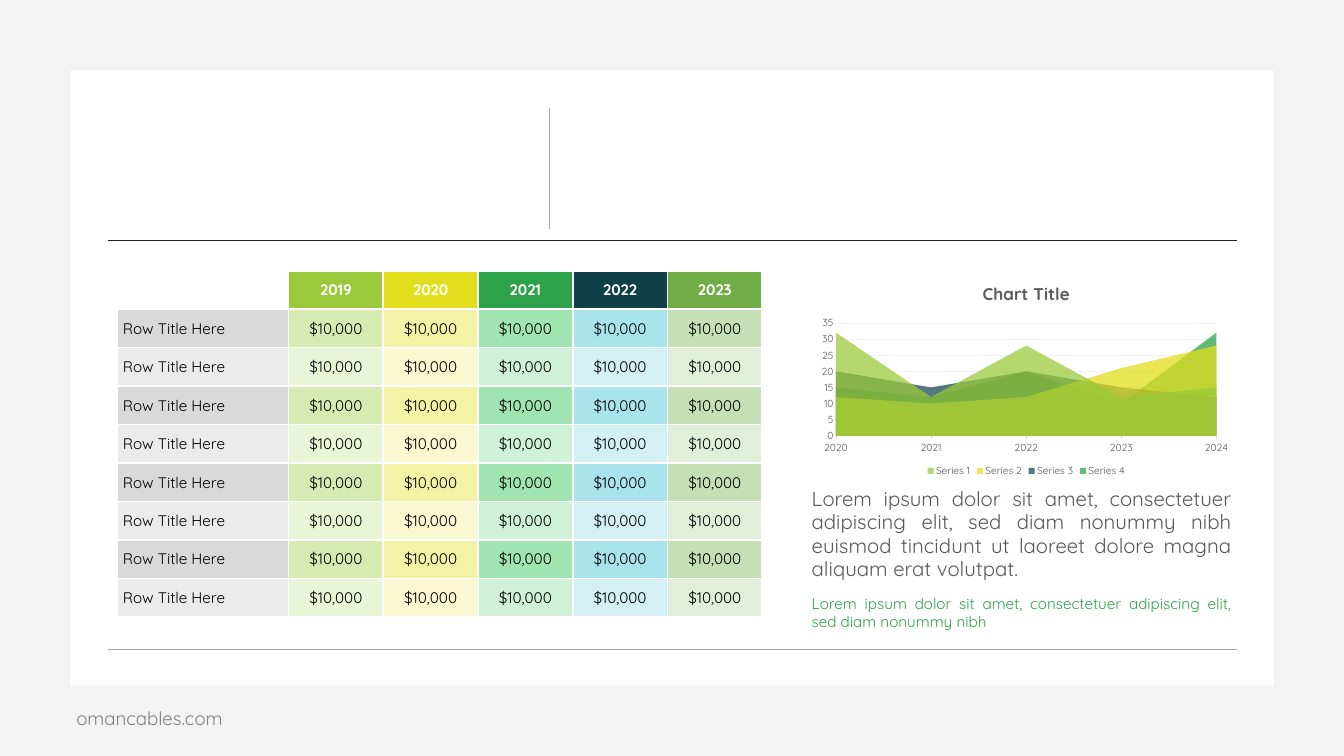
from dataclasses import dataclass

from lxml import etree
from pptx import Presentation
from pptx.chart.data import CategoryChartData
from pptx.dml.color import RGBColor
from pptx.enum.chart import XL_CHART_TYPE, XL_LEGEND_POSITION, XL_TICK_MARK
from pptx.enum.shapes import MSO_CONNECTOR, MSO_SHAPE
from pptx.enum.text import MSO_ANCHOR, PP_ALIGN
from pptx.oxml.ns import qn
from pptx.util import Inches, Pt

AREA = XL_CHART_TYPE.AREA
BOTTOM = XL_LEGEND_POSITION.BOTTOM
TICK_NONE, TICK_OUT = XL_TICK_MARK.NONE, XL_TICK_MARK.OUTSIDE
STRAIGHT, FRAME = MSO_CONNECTOR.STRAIGHT, MSO_SHAPE.FRAME
MIDDLE = MSO_ANCHOR.MIDDLE
LEFT, CENTER, JUSTIFY = PP_ALIGN.LEFT, PP_ALIGN.CENTER, PP_ALIGN.JUSTIFY


@dataclass(frozen=True)
class Theme:
    font: str = "Quicksand"
    white: str = "FFFFFF"
    black: str = "000000"
    frame: str = "EFEFEF"
    rule: str = "231F20"
    hairline: str = "A4A7AA"
    body: str = "57585B"
    footer: str = "808080"
    chart_text: str = "595959"
    axis: str = "D9D9D9"
    grid: str = "F2F2F2"
    row_title: str = "D9D9D9"
    lime: str = "9ACA3C"
    yellow: str = "E2DE1C"
    green: str = "2CA349"
    navy: str = "104047"
    leaf: str = "70AD47"
    tints: tuple = ("D7EAB1", "F4F2A4", "A0E5B1", "A9E3EC", "C5E0B4")
    body_size: int = 24
    footer_size: int = 22
    chart_title_size: int = 20
    table_size: int = 18
    note_size: int = 18
    chart_size: int = 12


class Deck:
    def __init__(self, prs, theme):
        self.prs, self.theme = prs, theme
        self.s = prs.slides.add_slide(prs.slide_layouts[6])

    def x(self, share):
        return round(self.prs.slide_width * share / 100)

    def y(self, share):
        return round(self.prs.slide_height * share / 100)

    def box(self, x, y, w, h):
        return self.x(x), self.y(y), self.x(w), self.y(h)

    def fill(self, fill, color, alpha=100):
        fill.solid()
        fill.fore_color.rgb = RGBColor.from_string(color)
        if alpha < 100:
            clr = fill._xPr.find(qn("a:solidFill"))[0]
            etree.SubElement(clr, qn("a:alpha"), val=str(alpha * 1000))

    def font(self, font, size, color, bold=False):
        font.name, font.size, font.bold = self.theme.font, Pt(size), bold
        font.color.rgb = RGBColor.from_string(color)

    def stroke(self, line, color, width):
        line.width = Pt(width)
        line.color.rgb = RGBColor.from_string(color)

    def frame(self, thickness):
        sp = self.s.shapes.add_shape(FRAME, *self.box(0, 0, 100, 100))
        sp.adjustments[0] = thickness
        sp.shadow.inherit = False
        self.fill(sp.fill, self.theme.frame, 75)
        sp.line.fill.background()

    def line(self, x1, y1, x2, y2, color, width):
        ln = self.s.shapes.add_connector(
            STRAIGHT, self.x(x1), self.y(y1), self.x(x2), self.y(y2))
        self.stroke(ln.line, color, width)
        etree.SubElement(ln._element.spPr, qn("a:effectLst"))

    def text(self, x, y, w, h, paragraphs, align=LEFT, left=0.1, spacing=1, gap=0):
        tf = self.s.shapes.add_textbox(*self.box(x, y, w, h)).text_frame
        tf.word_wrap = True
        tf.margin_left = Inches(left)
        for i, (text, size, color) in enumerate(paragraphs):
            p = tf.add_paragraph() if i else tf.paragraphs[0]
            p.text = text
            p.alignment, p.line_spacing = align, spacing
            p.space_before = Pt(gap if i else 0)
            self.font(p.runs[0].font, size, color)

    def cell(self, cell, text, fill, alpha=100, color=None, bold=False, align=CENTER):
        t = self.theme
        tcPr = cell._tc.get_or_add_tcPr()
        for side in ("lnL", "lnR", "lnT", "lnB"):
            ln = etree.SubElement(tcPr, qn(f"a:{side}"), w=str(Pt(2.25)))
            solid = etree.SubElement(ln, qn("a:solidFill"))
            etree.SubElement(solid, qn("a:srgbClr"), val=t.white)
        self.fill(cell.fill, fill, alpha)
        cell.vertical_anchor = MIDDLE
        if text:
            p = cell.text_frame.paragraphs[0]
            p.text, p.alignment = text, align
            self.font(p.runs[0].font, t.table_size, color or t.black, bold)

    def table(self, x, y, first_w, col_w, row_h, heads, rows):
        t = self.theme
        cols = len(heads) + 1
        width, height = first_w + col_w * len(heads), row_h * (len(rows) + 1)
        tbl = self.s.shapes.add_table(
            len(rows) + 1, cols, *self.box(x, y, width, height)).table
        tbl.first_row = tbl.horz_banding = False
        for c, col in enumerate(tbl.columns):
            col.width = self.x(col_w if c else first_w)
        for row in tbl.rows:
            row.height = self.y(row_h)
        self.cell(tbl.cell(0, 0), "", t.white)
        for c, (head, color) in enumerate(heads, 1):
            self.cell(tbl.cell(0, c), head, color, color=t.white, bold=True)
        for r, (title, *values) in enumerate(rows, 1):
            alpha = 100 if r % 2 else 50
            self.cell(tbl.cell(r, 0), title, t.row_title, alpha, align=LEFT)
            for c, (value, tint) in enumerate(zip(values, t.tints), 1):
                self.cell(tbl.cell(r, c), value, tint, alpha)

    def area_chart(self, x, y, w, h, title, cats, series, plot_area):
        t = self.theme
        data = CategoryChartData()
        data.categories = cats
        for name, values, _, _ in series:
            data.add_series(name, values)
        chart = self.s.shapes.add_chart(AREA, *self.box(x, y, w, h), data).chart
        self.font(chart.font, t.chart_size, t.chart_text)
        chart.has_title = True
        tf = chart.chart_title.text_frame
        tf.text = title
        self.font(tf.paragraphs[0].runs[0].font, t.chart_title_size, t.chart_text, True)
        chart.has_legend = True
        chart.legend.position = BOTTOM
        chart.legend.include_in_layout = False
        self.font(chart.legend.font, t.chart_size, t.chart_text)
        plot = chart.plots[0]
        plot.vary_by_categories = False
        for ser, (_, _, color, alpha) in zip(plot.series, series):
            self.fill(ser.format.fill, color, alpha)
        cat, val = chart.category_axis, chart.value_axis
        for axis in (cat, val):
            self.font(axis.tick_labels.font, t.chart_size, t.chart_text)
            axis.minor_tick_mark = TICK_NONE
        cat.major_tick_mark, val.major_tick_mark = TICK_OUT, TICK_NONE
        cat.has_major_gridlines = False
        self.stroke(cat.format.line, t.axis, 0.75)
        val.minimum_scale, val.maximum_scale, val.major_unit = 0, 35, 5
        val.format.line.fill.background()
        val.has_major_gridlines = True
        self.stroke(val.major_gridlines.format.line, t.grid, 0.75)
        self.place_plot(val._element.getparent(), plot_area)

    def place_plot(self, area, shares):
        for old in area.findall(qn("c:layout")):
            area.remove(old)
        layout = etree.Element(qn("c:layout"))
        area.insert(0, layout)
        manual = etree.SubElement(layout, qn("c:manualLayout"))
        keys = ("layoutTarget", "xMode", "yMode", "x", "y", "w", "h")
        for key, value in zip(keys, ("inner", "edge", "edge", *shares)):
            etree.SubElement(manual, qn(f"c:{key}"), val=str(value))


def main():
    prs = Presentation()
    prs.slide_width, prs.slide_height = Inches(21.99), Inches(12.37)
    t = Theme()
    d = Deck(prs, t)
    d.frame(0.093)
    d.line(40.88, 14.31, 40.88, 30.23, t.hairline, 1.1)
    d.line(8.05, 31.77, 92.04, 31.77, t.rule, 1)
    d.line(8.05, 85.93, 92.04, 85.93, t.hairline, 1.1)
    lorem = "Lorem ipsum dolor sit amet, consectetuer adipiscing elit, sed diam nonummy nibh"
    d.text(59.85, 64.11, 32.2, 18.43, [
        (f"{lorem} euismod tincidunt ut laoreet dolore magna aliquam erat volutpat.",
         t.body_size, t.body),
        (lorem, t.note_size, t.green),
    ], JUSTIFY, left=0.12, spacing=0.96, gap=16.5)
    d.area_chart(60.62, 35.81, 31.47, 27.65, "Chart Title",
                 ["2020", "2021", "2022", "2023", "2024"], [
                     ("Series 1", (32, 12, 28, 12, 15), t.lime, 74),
                     ("Series 2", (12, 10, 12, 21, 28), t.yellow, 74),
                     ("Series 3", (20, 15, 20, 15, 12), t.navy, 70),
                     ("Series 4", (15, 12, 20, 10, 32), t.green, 74),
                 ], (0.05, 0.25, 0.9, 0.54))
    years = ("2019", "2020", "2021", "2022", "2023")
    heads = list(zip(years, (t.lime, t.yellow, t.green, t.navy, t.leaf)))
    rows = [["Row Title Here"] + ["$10,000"] * len(years)] * 8
    d.table(8.69, 35.81, 12.78, 7.05, 5.09, heads, rows)
    d.text(5.68, 93.45, 11.82, 3.56, [("omancables.com", t.footer_size, t.footer)],
           left=0, spacing=0.9)
    prs.save("out.pptx")


if __name__ == "__main__":
    main()
